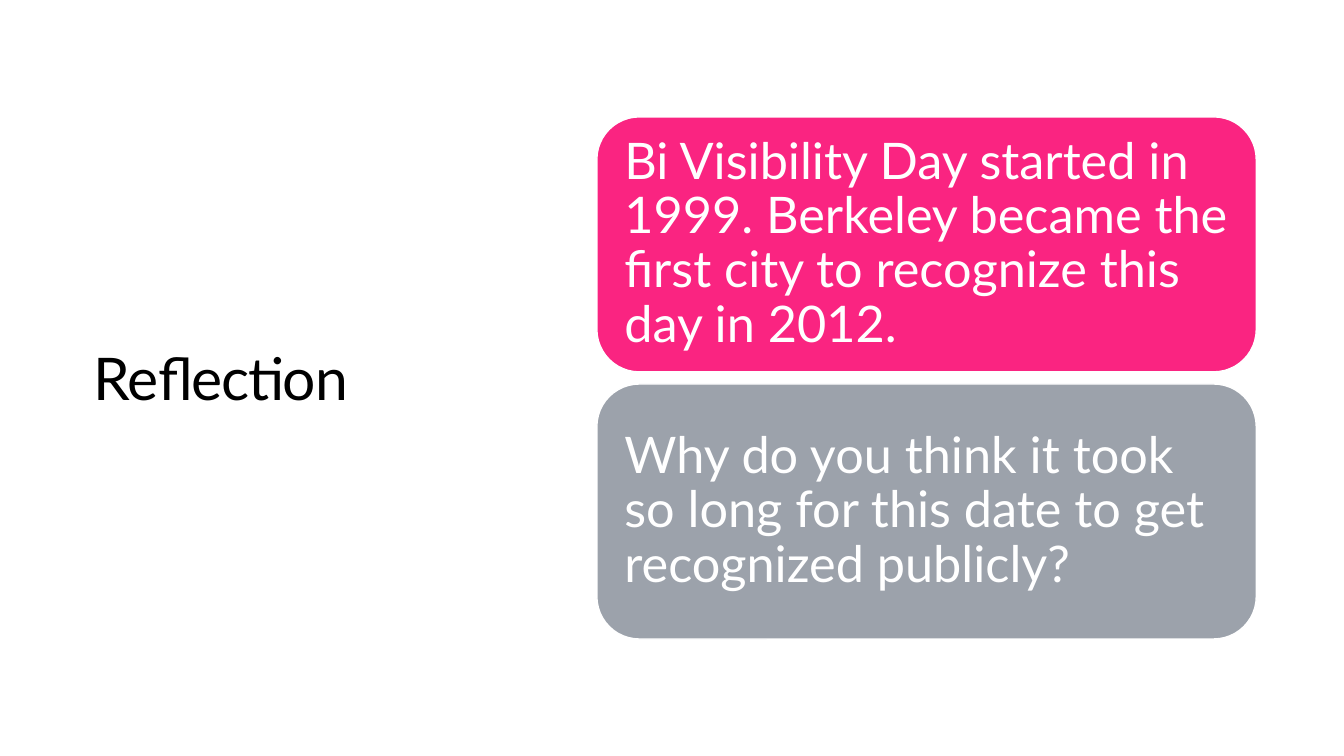
from pptx import Presentation
from pptx.dml.color import RGBColor
from pptx.enum.shapes import MSO_SHAPE
from pptx.enum.text import MSO_ANCHOR, MSO_AUTO_SIZE, PP_ALIGN
from pptx.util import Inches, Pt

ROUND = MSO_SHAPE.ROUNDED_RECTANGLE
MIDDLE = MSO_ANCHOR.MIDDLE
FIXED = MSO_AUTO_SIZE.NONE
LEFT = PP_ALIGN.LEFT
TITLE_ONLY = 5

CARDS = [
    ("Bi Visibility Day started in 1999. Berkeley became the first city "
     "to recognize this day in 2012.", "FA2481"),
    ("Why do you think it took so long for this date to get recognized "
     "publicly?", "9CA2AB"),
]


def color(code):
    return RGBColor.from_string(code)


def style(item, values):
    for name, value in values.items():
        setattr(item, name, value)


class Deck:
    font = "Lato"
    white = "FFFFFF"
    black = "000000"

    def __init__(self, show):
        self.slide = show.slides.add_slide(show.slide_layouts[TITLE_ONLY])

    def label(self, frame, text, size, ink, space):
        style(frame, {"word_wrap": True, "auto_size": FIXED,
                      "vertical_anchor": MIDDLE})
        para = frame.paragraphs[0]
        style(para, {"alignment": LEFT, "line_spacing": space})
        run = para.add_run()
        run.text = text
        style(run.font, {"name": self.font, "size": Pt(size), "bold": False})
        run.font.color.rgb = color(ink)
        return run

    def title(self, text, left, top, width, height):
        shape = self.slide.shapes.title
        style(shape, {"left": Inches(left), "top": Inches(top),
                      "width": Inches(width), "height": Inches(height)})
        run = self.label(shape.text_frame, text, 42, self.black, 0.95)
        run._r.get_or_add_rPr().set("spc", "-50")

    def card(self, text, fill, left, top, width, height):
        shape = self.slide.shapes.add_shape(
            ROUND, Inches(left), Inches(top), Inches(width), Inches(height))
        shape.shadow.inherit = False
        shape.fill.solid()
        shape.fill.fore_color.rgb = color(fill)
        shape.line.color.rgb = color(self.white)
        shape.line.width = Pt(1)
        frame = shape.text_frame
        style(frame, {"margin_left": Inches(0.15), "margin_right": Inches(0.13),
                      "margin_top": Inches(0.15), "margin_bottom": Inches(0.15)})
        self.label(frame, text, 36, self.white, 0.9)


def main():
    show = Presentation()
    style(show, {"slide_width": Inches(13.33), "slide_height": Inches(7.5)})
    deck = Deck(show)
    deck.title("Reflection", 0.83, 0.85, 4.27, 5.84)
    for row, (text, fill) in enumerate(CARDS):
        deck.card(text, fill, 5.92, 1.16 + row * 2.65, 6.54, 2.53)
    show.save("out.pptx")


if __name__ == "__main__":
    main()
